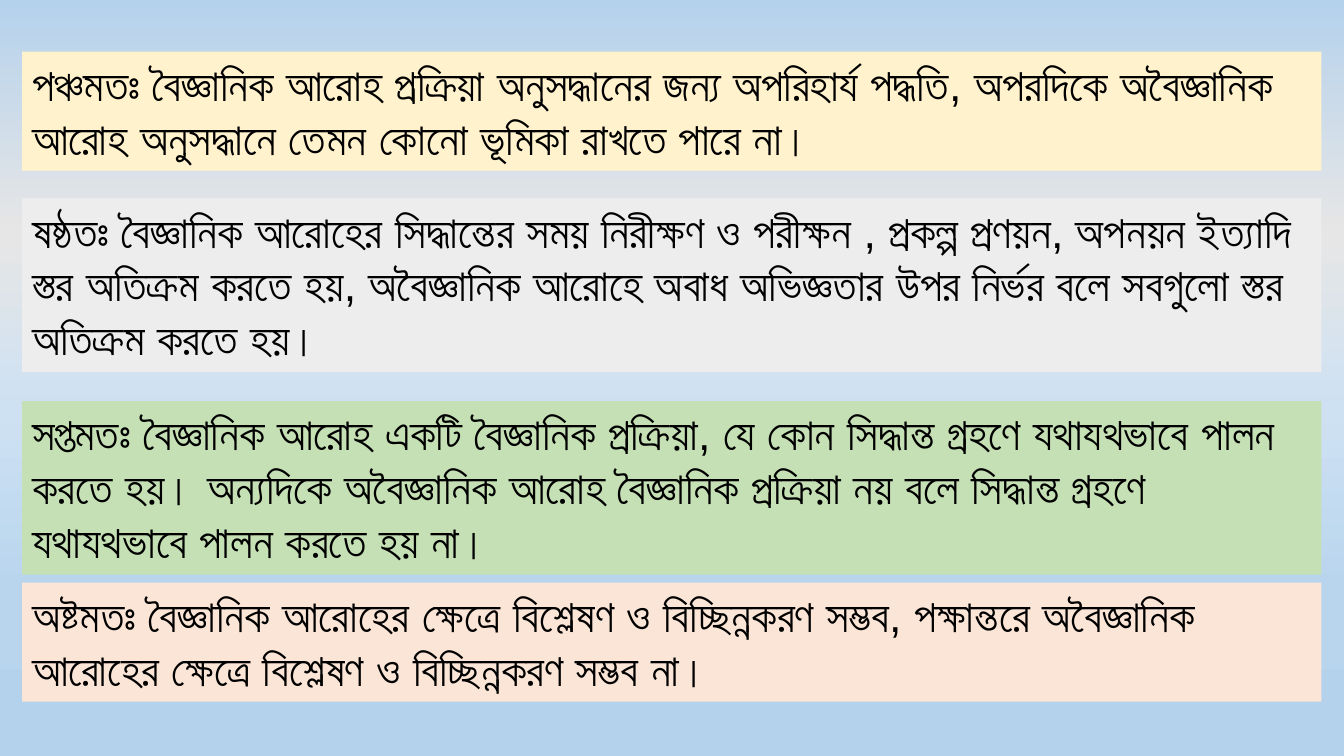
from lxml import etree
from pptx import Presentation
from pptx.dml.color import RGBColor
from pptx.enum.text import MSO_AUTO_SIZE, MSO_ANCHOR, PP_ALIGN
from pptx.oxml.ns import qn
from pptx.util import Cm, Pt

FIT = MSO_AUTO_SIZE.SHAPE_TO_FIT_TEXT
TOP = MSO_ANCHOR.TOP
LEFT = PP_ALIGN.LEFT

COLORS = {
    "sky": "B5D2EC", "fog": "E7E6E6", "mist": "CEE1F2", "haze": "B9D5ED",
    "cream": "FFF2CC", "gray": "EDEDED", "green": "C5E0B4", "peach": "FBE5D6",
    "ink": "000000",
}
STOPS = [(0, "sky"), (31, "fog"), (54, "mist"), (78, "haze"), (99, "sky")]
FRAME = {"word_wrap": True, "auto_size": FIT, "vertical_anchor": TOP}
FONT = {"name": "Arial", "size": Pt(32)}
HEIGHTS = {2: 3, 3: 4.37}  # centimetres by number of text lines

# top in centimetres, number of lines, fill, text
POINTS = [
    (1.3, 2, "cream",
     "পঞ্চমতঃ বৈজ্ঞানিক আরোহ প্রক্রিয়া অনুসদ্ধানের জন্য অপরিহার্য পদ্ধতি, "
     "অপরদিকে অবৈজ্ঞানিক আরোহ অনুসদ্ধানে তেমন কোনো ভূমিকা রাখতে পারে না।"),
    (5, 3, "gray",
     "ষষ্ঠতঃ বৈজ্ঞানিক আরোহের সিদ্ধান্তের সময় নিরীক্ষণ ও পরীক্ষন , প্রকল্প "
     "প্রণয়ন, অপনয়ন ইত্যাদি স্তর অতিক্রম করতে হয়, অবৈজ্ঞানিক আরোহে অবাধ "
     "অভিজ্ঞতার উপর নির্ভর বলে সবগুলো স্তর অতিক্রম করতে হয়।"),
    (10.11, 3, "green",
     "সপ্তমতঃ বৈজ্ঞানিক আরোহ একটি বৈজ্ঞানিক প্রক্রিয়া, যে কোন সিদ্ধান্ত "
     "গ্রহণে যথাযথভাবে পালন করতে হয়। অন্যদিকে অবৈজ্ঞানিক আরোহ বৈজ্ঞানিক "
     "প্রক্রিয়া নয় বলে সিদ্ধান্ত গ্রহণে যথাযথভাবে পালন করতে হয় না।"),
    (14.68, 2, "peach",
     "অষ্টমতঃ বৈজ্ঞানিক আরোহের ক্ষেত্রে বিশ্লেষণ ও বিচ্ছিন্নকরণ সম্ভব, "
     "পক্ষান্তরে অবৈজ্ঞানিক আরোহের ক্ষেত্রে বিশ্লেষণ ও বিচ্ছিন্নকরণ সম্ভব না।"),
]


def color(name):
    return RGBColor.from_string(COLORS[name])


def apply(target, values):
    for key, value in values.items():
        setattr(target, key, value)


def paint_back(slide):
    """Fill the background with a gradient running from top to bottom."""
    fill = slide.background.fill
    fill.gradient()
    fill.gradient_angle = 270
    stops = slide.element.find(".//" + qn("a:gsLst"))
    for stop in list(stops):
        stops.remove(stop)
    for place, name in STOPS:
        stop = etree.SubElement(stops, qn("a:gs"), pos=str(place * 1000))
        etree.SubElement(stop, qn("a:srgbClr"), val=COLORS[name])


def add_point(slide, top, lines, fill, text):
    box = slide.shapes.add_textbox(Cm(0.56), Cm(top), Cm(32.74), Cm(HEIGHTS[lines]))
    box.fill.solid()
    box.fill.fore_color.rgb = color(fill)
    frame = box.text_frame
    apply(frame, FRAME)
    para = frame.paragraphs[0]
    para.alignment = LEFT
    run = para.add_run()
    run.text = text
    apply(run.font, FONT)
    run.font.color.rgb = color("ink")
    etree.SubElement(run.font._element, qn("a:cs"), typeface=FONT["name"])


def main():
    deck = Presentation()
    deck.slide_width, deck.slide_height = Cm(33.87), Cm(19.05)
    slide = deck.slides.add_slide(deck.slide_layouts[6])
    paint_back(slide)
    for point in POINTS:
        add_point(slide, *point)
    deck.save("out.pptx")


if __name__ == "__main__":
    main()
